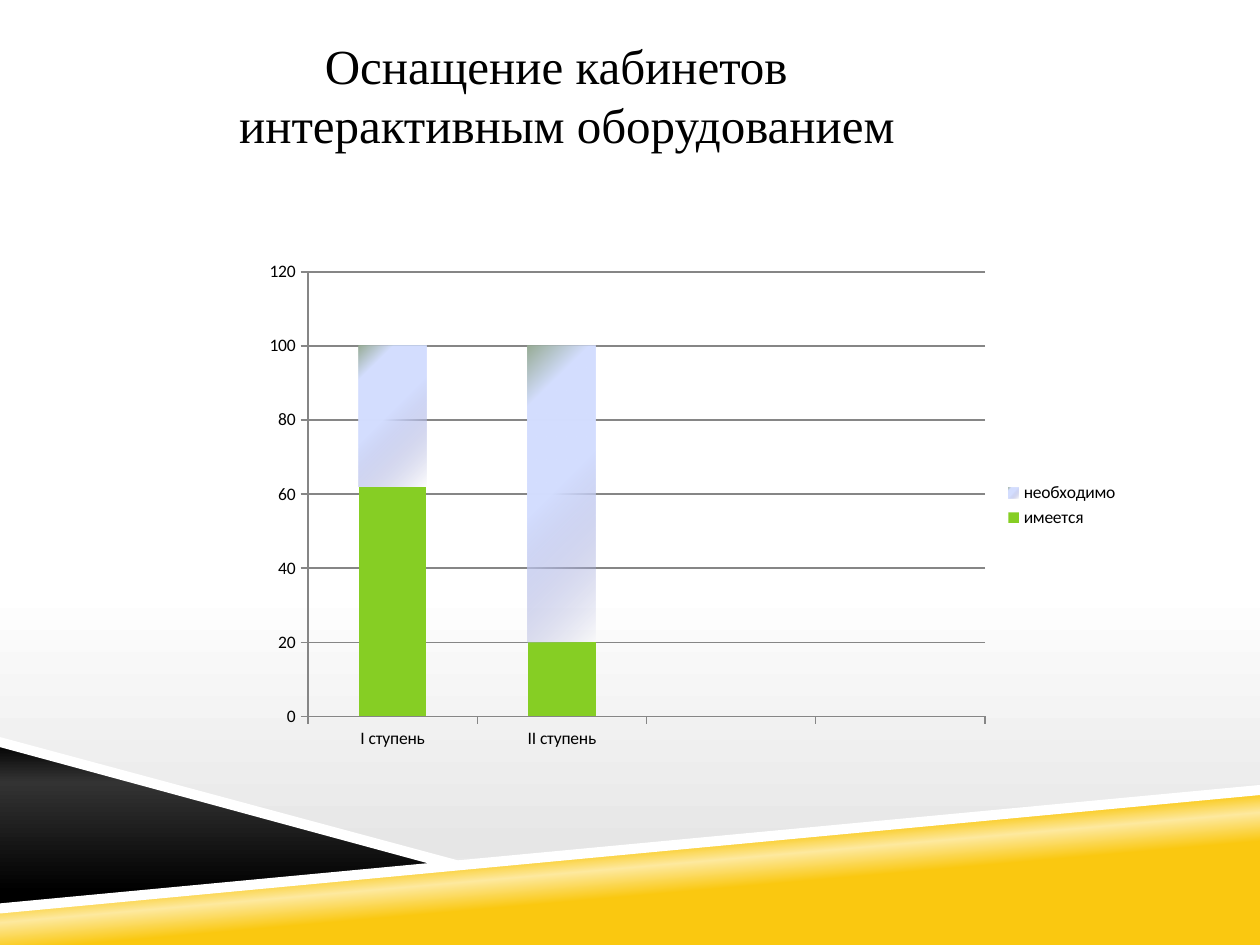
from lxml import etree
from pptx import Presentation
from pptx.chart.data import CategoryChartData
from pptx.dml.color import RGBColor
from pptx.enum.chart import XL_CHART_TYPE, XL_LEGEND_POSITION, XL_TICK_MARK
from pptx.enum.text import MSO_ANCHOR, MSO_AUTO_SIZE
from pptx.oxml.ns import qn
from pptx.util import Inches, Pt

STACKED = XL_CHART_TYPE.COLUMN_STACKED
LEGEND_RIGHT = XL_LEGEND_POSITION.RIGHT
TICK_OUT = XL_TICK_MARK.OUTSIDE
MIDDLE = MSO_ANCHOR.MIDDLE
FIT_SHAPE = MSO_AUTO_SIZE.SHAPE_TO_FIT_TEXT

# Content
TITLE = [("Оснащение кабинетов", 0.68), ("интерактивным оборудованием", 0)]  # text, indent
CATEGORIES = ["I ступень", "II ступень", "", ""]
SERIES = [
    ("имеется", [62, 20, None, None], "available"),
    ("необходимо", [38, 80, None, None], "needed"),
]

# A fill is a colour or (angle, [(position, colour, opacity)])
THEME = {
    "text": "000000",
    "axis": "868686",
    "title_font": "Times New Roman",
    "title_size": 28,
    "chart_font": "Calibri",
    "chart_size": 10,
    "background": (90, [(0, "FFFFFF", 100), (62, "FFFFFF", 100),
                        (90, "E6E6E6", 100), (100, "FFFFFF", 100)]),
    "yellow": (265, [(39, "FAC810", 100), (50, "FDE99F", 100), (58, "FAC810", 100)]),
    "black": (90, [(0, "000000", 100), (24, "333333", 100), (90, "000000", 100)]),
    "white": "FFFFFF",
    "available": "86CE24",
    "needed": (225, [(0, "8488C4", 0), (53, "D4DEFF", 100),
                     (83, "D4DEFF", 100), (100, "96AB94", 100)]),
}

# Decorative bands: fill and corner points in inches
BANDS = [
    ("yellow", [(0, 7.21), (10, 6.27), (10, 7.5), (0, 7.5)]),
    ("black", [(0, 5.89), (3.59, 6.85), (0, 7.21)]),
    ("white", [(10, 6.23), (0, 7.17), (0, 7.25), (10, 6.31)]),
    ("white", [(0, 5.85), (0, 5.93), (3.5, 6.88), (3.75, 6.86)]),
]


def color(name):
    return RGBColor.from_string(THEME[name])


def paint(fill, element, name):
    """Apply a theme fill; element is the XML parent of the fill."""
    fill.solid()
    value = THEME[name]
    if isinstance(value, str):
        fill.fore_color.rgb = color(name)
        return
    angle, stops = value
    gradient = etree.Element(qn("a:gradFill"), rotWithShape="1")
    stop_list = etree.SubElement(gradient, qn("a:gsLst"))
    for position, rgb, opacity in stops:
        stop = etree.SubElement(stop_list, qn("a:gs"), pos=str(position * 1000))
        stop_color = etree.SubElement(stop, qn("a:srgbClr"), val=rgb)
        if opacity < 100:
            etree.SubElement(stop_color, qn("a:alpha"), val=str(opacity * 1000))
    etree.SubElement(gradient, qn("a:lin"), ang=str(angle * 60000), scaled="0")
    solid = element.find(".//" + qn("a:solidFill"))
    solid.getparent().replace(solid, gradient)


def add_band(slide, name, points):
    corners = [(Inches(x), Inches(y)) for x, y in points]
    builder = slide.shapes.build_freeform(*corners[0], scale=1.0)
    builder.add_line_segments(corners[1:], close=True)
    shape = builder.convert_to_shape()
    shape.shadow.inherit = False
    paint(shape.fill, shape._element.spPr, name)
    shape.line.fill.background()


def add_title(slide):
    box = slide.shapes.add_textbox(Inches(1.8), Inches(0.23), Inches(5.46), Inches(1.04))
    frame = box.text_frame
    frame.word_wrap = False
    frame.auto_size = FIT_SHAPE
    frame.vertical_anchor = MIDDLE
    for index, (text, indent) in enumerate(TITLE):
        paragraph = frame.add_paragraph() if index else frame.paragraphs[0]
        paragraph.text = text
        paragraph._p.get_or_add_pPr().set("marL", str(Inches(indent)))
        paragraph.font.name = THEME["title_font"]
        paragraph.font.size = Pt(THEME["title_size"])
        paragraph.font.color.rgb = color("text")


def add_equipment_chart(slide):
    data = CategoryChartData()
    data.categories = CATEGORIES
    for name, values, _ in SERIES:
        data.add_series(name, values)
    chart = slide.shapes.add_chart(
        STACKED, Inches(2), Inches(2), Inches(6.98), Inches(4.02), data).chart
    chart.has_title = False
    chart.font.name = THEME["chart_font"]
    chart.font.size = Pt(THEME["chart_size"])
    chart.font.color.rgb = color("text")
    chart.has_legend = True
    chart.legend.position = LEGEND_RIGHT
    chart.legend.include_in_layout = False

    plot = chart.plots[0]
    plot.gap_width = 150
    plot.overlap = 100
    plot.vary_by_categories = False
    for series, (_, _, fill_name) in zip(plot.series, SERIES):
        paint(series.format.fill, series._element, fill_name)

    # Axes and gridlines
    value_axis = chart.value_axis
    value_axis.minimum_scale = 0
    value_axis.maximum_scale = 120
    value_axis.major_unit = 20
    value_axis.has_major_gridlines = True
    for axis in (chart.category_axis, value_axis):
        axis.major_tick_mark = TICK_OUT
    for part in (chart.category_axis, value_axis, value_axis.major_gridlines):
        part.format.line.color.rgb = color("axis")
        part.format.line.width = Pt(0.75)


def main():
    presentation = Presentation()
    presentation.slide_width = Inches(10)
    presentation.slide_height = Inches(7.5)
    slide = presentation.slides.add_slide(presentation.slide_layouts[6])
    paint(slide.background.fill, slide._element, "background")
    for name, points in BANDS:
        add_band(slide, name, points)
    add_title(slide)
    add_equipment_chart(slide)
    presentation.save("out.pptx")


if __name__ == "__main__":
    main()
